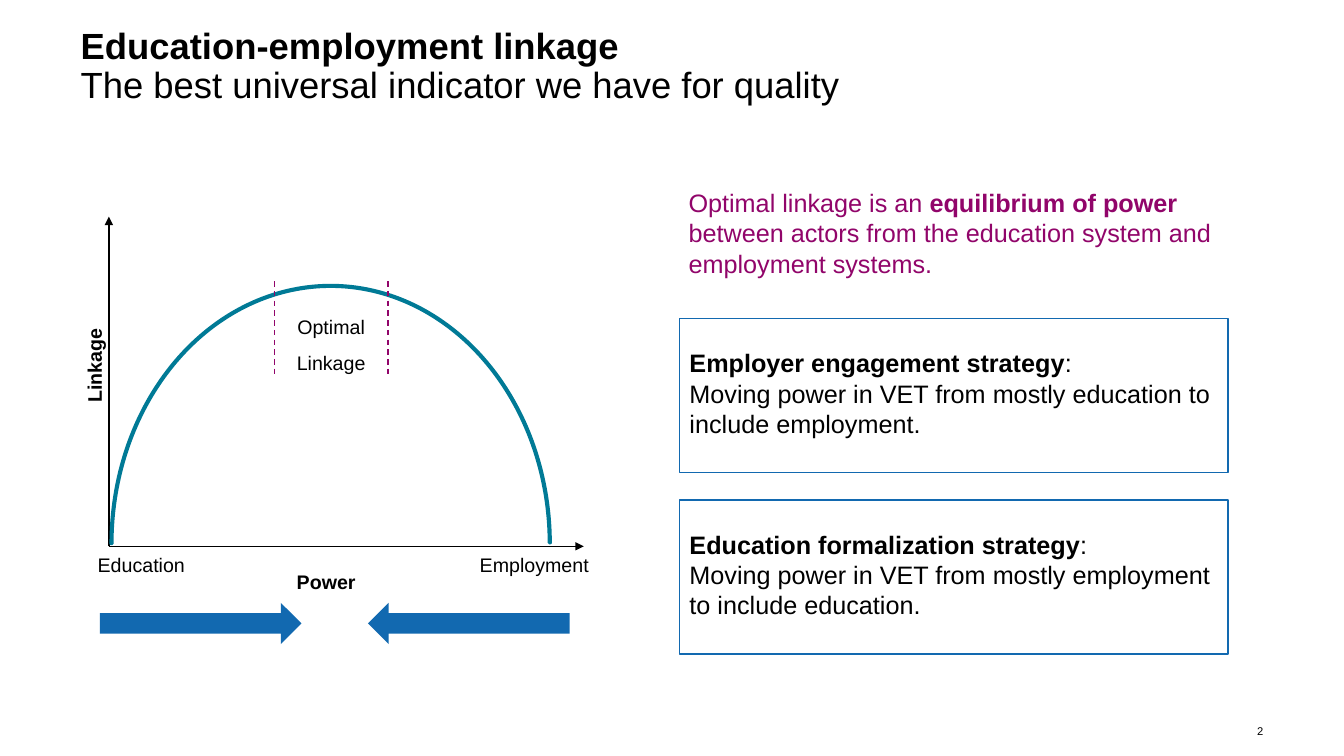
from lxml.etree import SubElement
from pptx import Presentation
from pptx.dml.color import RGBColor
from pptx.enum.dml import MSO_LINE
from pptx.enum.shapes import MSO_CONNECTOR, MSO_SHAPE
from pptx.enum.text import MSO_ANCHOR, MSO_AUTO_SIZE, PP_ALIGN
from pptx.oxml.ns import qn
from pptx.util import Inches, Pt

FONT = "Arial"
BLACK, BLUE, TEAL, PURPLE = "000000", "1269B0", "007A96", "91056A"


def rgb(color):
    return RGBColor.from_string(color)


def write(frame, paragraphs, size, color=BLACK, align=PP_ALIGN.LEFT,
          anchor=MSO_ANCHOR.TOP, spacing=None, after=None):
    """Each paragraph is a list of (text, bold) runs; "\\v" breaks the line."""
    frame.word_wrap = True
    frame.auto_size = MSO_AUTO_SIZE.NONE
    frame.vertical_anchor = anchor
    for index, runs in enumerate(paragraphs):
        paragraph = frame.add_paragraph() if index else frame.paragraphs[0]
        for text, bold in runs:
            if text == "\v":
                paragraph.add_line_break()
                continue
            run = paragraph.add_run()
            run.text = text
            run.font.bold = bold
        paragraph.alignment = align
        if spacing:
            paragraph.line_spacing = spacing
        if after:
            paragraph.space_after = Pt(after)
        paragraph.font.name = FONT
        paragraph.font.size = Pt(size)
        paragraph.font.color.rgb = rgb(color)


def no_insets(frame):
    frame.margin_left = frame.margin_right = 0
    frame.margin_top = frame.margin_bottom = 0


def add_text(slide, x, y, w, h):
    box = slide.shapes.add_textbox(Inches(x), Inches(y), Inches(w), Inches(h))
    return box.text_frame


def add_shape(slide, kind, x, y, w, h, fill=None, line=None, weight=1):
    shape = slide.shapes.add_shape(kind, Inches(x), Inches(y), Inches(w), Inches(h))
    shape.shadow.inherit = False
    if fill:
        shape.fill.solid()
        shape.fill.fore_color.rgb = rgb(fill)
    else:
        shape.fill.background()
    if line:
        shape.line.color.rgb = rgb(line)
        shape.line.width = Pt(weight)
    else:
        shape.line.fill.background()
    return shape


def add_line(slide, x1, y1, x2, y2, color, dashed=False, arrow=False):
    line = slide.shapes.add_connector(
        MSO_CONNECTOR.STRAIGHT, Inches(x1), Inches(y1), Inches(x2), Inches(y2))
    line.line.color.rgb = rgb(color)
    line.line.width = Pt(1)
    if dashed:
        line.line.dash_style = MSO_LINE.DASH
    properties = line._element.spPr
    if arrow:
        SubElement(properties.find(qn("a:ln")), qn("a:tailEnd"), type="triangle")
    SubElement(properties, qn("a:effectLst"))


def heading(slide, x, y, w, h):
    title = slide.shapes.title
    title.left, title.top = Inches(x), Inches(y)
    title.width, title.height = Inches(w), Inches(h)
    no_insets(title.text_frame)
    write(title.text_frame,
          [[("Education-employment linkage", True), ("\v", False),
            ("The best universal indicator we have for quality", False)]],
          26, spacing=0.9)


def page_number(slide, x, y, w, h):
    frame = add_text(slide, x, y, w, h)
    no_insets(frame)
    write(frame, [[("2", False)]], 8, align=PP_ALIGN.RIGHT, anchor=MSO_ANCHOR.MIDDLE)


def linkage_curve(slide, x, y, w, h):
    """Arch of linkage over power, with its axes at the box's left and bottom."""
    base = y + h

    def label(dx, dy, width, height, lines, bold=False, align=PP_ALIGN.CENTER,
              anchor=MSO_ANCHOR.TOP):
        frame = add_text(slide, x + dx, y + dy, width, height)
        write(frame, [[(line, bold)] for line in lines], 14, align=align,
              anchor=anchor, spacing=1.07, after=8)
        return frame

    # Axes and their labels
    add_line(slide, x, base, x, y, BLACK, arrow=True)
    add_line(slide, x, base, x + w, base, BLACK, arrow=True)
    label(-0.21, h, 1.64, 0.52, ["Education"], align=PP_ALIGN.LEFT)
    label(w - 1.82, h, 1.97, 0.46, ["Employment"], align=PP_ALIGN.RIGHT)
    label(1.21, h, 1.89, 0.69, ["Power"], True, anchor=MSO_ANCHOR.MIDDLE)
    linkage = label(-0.57, 0.65, 0.83, 1.65, ["Linkage"], True,
                    anchor=MSO_ANCHOR.MIDDLE)
    linkage._txBody.bodyPr.set("vert", "vert270")

    # Arch: a hairline half ring (angles in units of 100000/60000 degrees)
    arch = add_shape(slide, MSO_SHAPE.BLOCK_ARC, x + 0.02, y + 0.68, 4.36, 5.13,
                     TEAL, TEAL, 2)
    for index, value in enumerate((108, 215.865, 0.003)):
        arch.adjustments[index] = value

    # Optimal range
    for dx in (1.64, 2.77):
        add_line(slide, x + dx, y + 0.64, x + dx, y + 1.58, PURPLE, dashed=True)
    label(1.32, 0.91, 1.77, 0.83, ["Optimal", "Linkage"])


def power_arrows(slide, x, y, w, h):
    length = 2
    add_shape(slide, MSO_SHAPE.RIGHT_ARROW, x, y, length, h, BLUE)
    add_shape(slide, MSO_SHAPE.LEFT_ARROW, x + w - length, y, length, h, BLUE)


def key_message(slide, x, y, w, h):
    frame = add_text(slide, x, y, w, h)
    no_insets(frame)
    write(frame,
          [[("Optimal linkage is an ", False), ("equilibrium of power ", True),
            ("between actors from the education system and employment systems.",
             False)]],
          18, PURPLE)


def strategies(slide, x, y, w, h):
    """Two outlined boxes of equal height, one above the other."""
    gap = 0.27
    height = (h - gap) / 2
    texts = (
        ("Employer engagement strategy",
         "Moving power in VET from mostly education to include employment."),
        ("Education formalization strategy",
         "Moving power in VET from mostly employment to include education."),
    )
    for index, (name, meaning) in enumerate(texts):
        box = add_shape(slide, MSO_SHAPE.RECTANGLE, x, y + index * (height + gap),
                        w, height, line=BLUE)
        box.text_frame.margin_bottom = Inches(0.1)
        write(box.text_frame, [[(name, True), (":", False)], [(meaning, False)]],
              18, anchor=MSO_ANCHOR.MIDDLE)


def main():
    presentation = Presentation()
    presentation.slide_width = Inches(13.33)
    presentation.slide_height = Inches(7.5)
    slide = presentation.slides.add_slide(presentation.slide_layouts[5])

    heading(slide, 0.8, 0.28, 11.73, 0.98)
    linkage_curve(slide, 1.08, 2.15, 4.71, 3.27)
    power_arrows(slide, 0.99, 5.98, 4.66, 0.41)
    key_message(slide, 6.83, 1.86, 5.36, 1.02)
    strategies(slide, 6.74, 3.16, 5.44, 3.33)
    page_number(slide, 12.18, 7.13, 0.35, 0.24)

    presentation.save("out.pptx")


if __name__ == "__main__":
    main()
